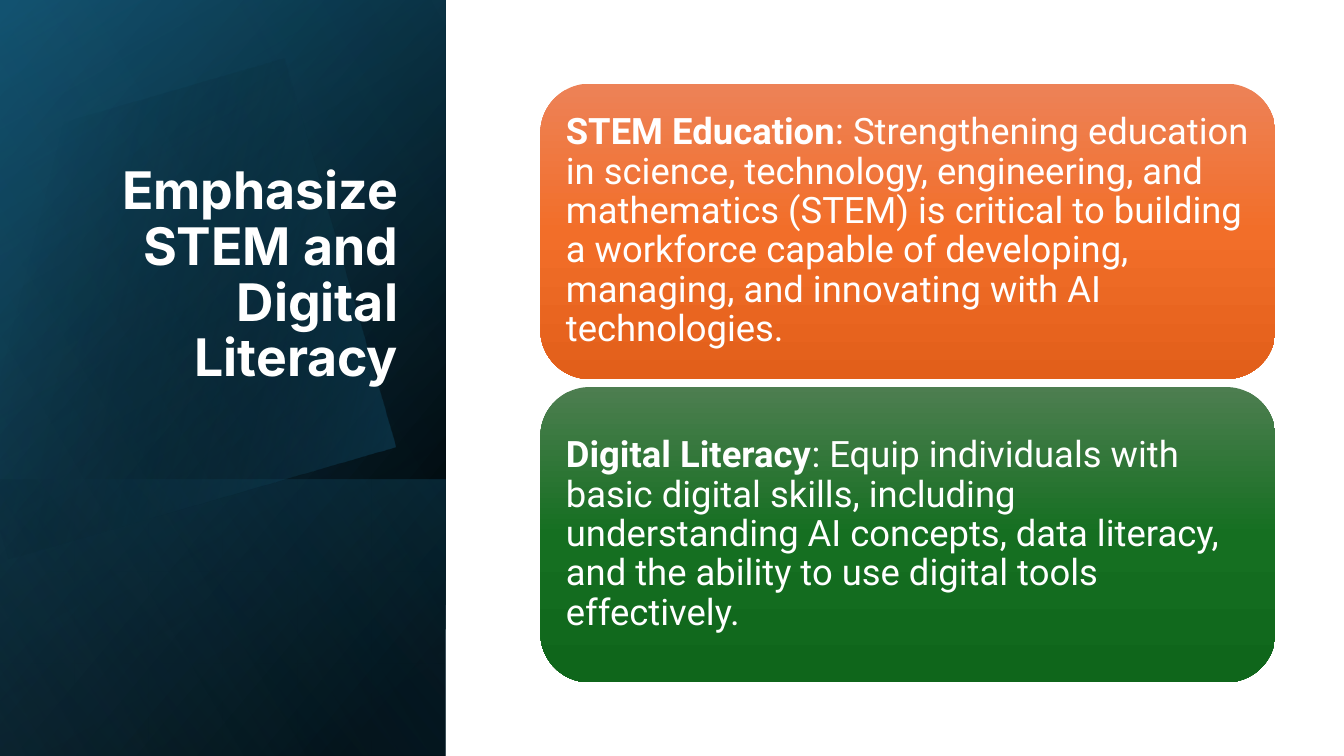
import math
import pptx
import pptx.util
import pptx.oxml
import pptx.oxml.ns
import pptx.dml.color
import pptx.enum.shapes
import pptx.enum.text

Inches, Pt = pptx.util.Inches, pptx.util.Pt
RGB = pptx.dml.color.RGBColor
Kind = pptx.enum.shapes.MSO_SHAPE
Align, Anchor = pptx.enum.text.PP_ALIGN, pptx.enum.text.MSO_ANCHOR

WHITE = RGB(0xFF, 0xFF, 0xFF)
BLACK = RGB(0x00, 0x00, 0x00)
NAVY = RGB(0x10, 0x48, 0x62)
TEAL = RGB(0x15, 0x60, 0x82)
SKY = RGB(0x46, 0xB1, 0xE1)
ORANGE = [RGB(0xED, 0x82, 0x57), RGB(0xF2, 0x6E, 0x29), RGB(0xE2, 0x5F, 0x1A)]
GREEN = [RGB(0x4D, 0x7E, 0x50), RGB(0x15, 0x6F, 0x21), RGB(0x0F, 0x66, 0x1B)]

WIDE, HIGH = 13.33, 7.5
SIDE = 4.42  # width of the dark panel


def shade(shape, stops, angle):
    """Fill with a linear gradient of (position, colour, opacity) stops."""
    shape.shadow.inherit = False
    shape.line.fill.background()
    shape.fill.gradient()
    marks = "".join(
        f'<a:gs pos="{pos * 1000}"><a:srgbClr val="{tone}">'
        f'<a:alpha val="{alpha * 1000}"/></a:srgbClr></a:gs>'
        for pos, tone, alpha in stops)
    fresh = pptx.oxml.parse_xml(
        f'<a:gradFill {pptx.oxml.ns.nsdecls("a")} rotWithShape="1">'
        f'<a:gsLst>{marks}</a:gsLst>'
        f'<a:lin ang="{angle * 60000}" scaled="0"/></a:gradFill>')
    props = shape.element.spPr
    props.replace(props.find(pptx.oxml.ns.qn("a:gradFill")), fresh)


def write(para, words, look):
    """Add a run and give it the font values in look."""
    run = para.add_run()
    run.text = words
    run.font.color.rgb = WHITE
    for key, value in look.items():
        setattr(run.font, key, value)


deck = pptx.Presentation()
deck.slide_width, deck.slide_height = Inches(WIDE), Inches(HIGH)
slide = deck.slides.add_slide(deck.slide_layouts[5])
shapes = slide.shapes
title = shapes.title

# Dark panel: quarter-turned layers as top, height, stops, angle
layers = [
    (0, HIGH, [(8, BLACK, 100), (100, NAVY, 100)], 50),
    (0, HIGH, [(0, BLACK, 0), (99, TEAL, 46)], 30),
    (4.76, HIGH - 4.76, [(2, TEAL, 29), (100, BLACK, 30)], 130),
    (0, HIGH, [(0, BLACK, 0), (99, SKY, 11)], 120),
]
for top, tall, stops, angle in layers:
    # The large disc lies below the last layer
    if angle == 120:
        turn, cut, radius = 16.1, 133.6, 2.285
        ring = []
        for step in range(121):
            at = math.radians(turn - cut + 2 * cut * step / 120)
            ring.append((radius * math.cos(at), radius * math.sin(at)))
        pen = shapes.build_freeform(*ring[0], scale=Inches(1))
        pen.add_line_segments(ring[1:], close=True)
        disc = pen.convert_to_shape()
        disc.left, disc.top = Inches(-0.55), Inches(1.06)
        disc.rotation = 360 - turn
        shade(disc, [(29, BLACK, 0), (100, TEAL, 43)], 30)
    layer = shapes.add_shape(
        Kind.RECTANGLE, Inches((SIDE - tall) / 2),
        Inches(top + (tall - SIDE) / 2), Inches(tall), Inches(SIDE))
    layer.rotation = 90
    layer.element.spPr.xfrm.set("flipH", "1")
    shade(layer, stops, angle)

# Title, raised above the panel
shapes.element.append(title.element)
place = {"left": 0.64, "top": 1.84, "width": 3.41, "height": 2.62}
for key, value in place.items():
    setattr(title, key, Inches(value))
frame = title.text_frame
form = {"word_wrap": True, "auto_size": pptx.enum.text.MSO_AUTO_SIZE.NONE,
        "vertical_anchor": Anchor.BOTTOM, "margin_bottom": Inches(0.61)}
for key, value in form.items():
    setattr(frame, key, value)
para = frame.paragraphs[0]
para.alignment, para.line_spacing = Align.RIGHT, 0.9
write(para, "Emphasize STEM and Digital Literacy",
      {"name": "Inter", "size": Pt(37), "bold": True})

# Cards
cards = [
    (ORANGE, "STEM Education",
     ": Strengthening education in science, technology, engineering, and "
     "mathematics (STEM) is critical to building a workforce capable of "
     "developing, managing, and innovating with AI technologies."),
    (GREEN, "Digital Literacy",
     ": Equip individuals with basic digital skills, including understanding "
     "AI concepts, data literacy, and the ability to use digital tools "
     "effectively."),
]
group = shapes.add_group_shape()
for row, (tones, head, body) in enumerate(cards):
    card = group.shapes.add_shape(
        Kind.ROUNDED_RECTANGLE, Inches(5.36), Inches(0.83 + row * 3.01),
        Inches(7.29), Inches(2.93))
    shade(card, [(pos, tone, 100) for pos, tone in zip((0, 50, 100), tones)], 90)
    frame = card.text_frame
    frame.word_wrap, frame.vertical_anchor = True, Anchor.MIDDLE
    for edge in ("left", "top", "right", "bottom"):
        setattr(frame, f"margin_{edge}", Inches(0.11))
    para = frame.paragraphs[0]
    para.alignment, para.line_spacing = Align.LEFT, 0.9
    for words, bold in ((head, True), (body, False)):
        write(para, words, {"name": "Roboto", "size": Pt(26), "bold": bold})

deck.save("out.pptx")
